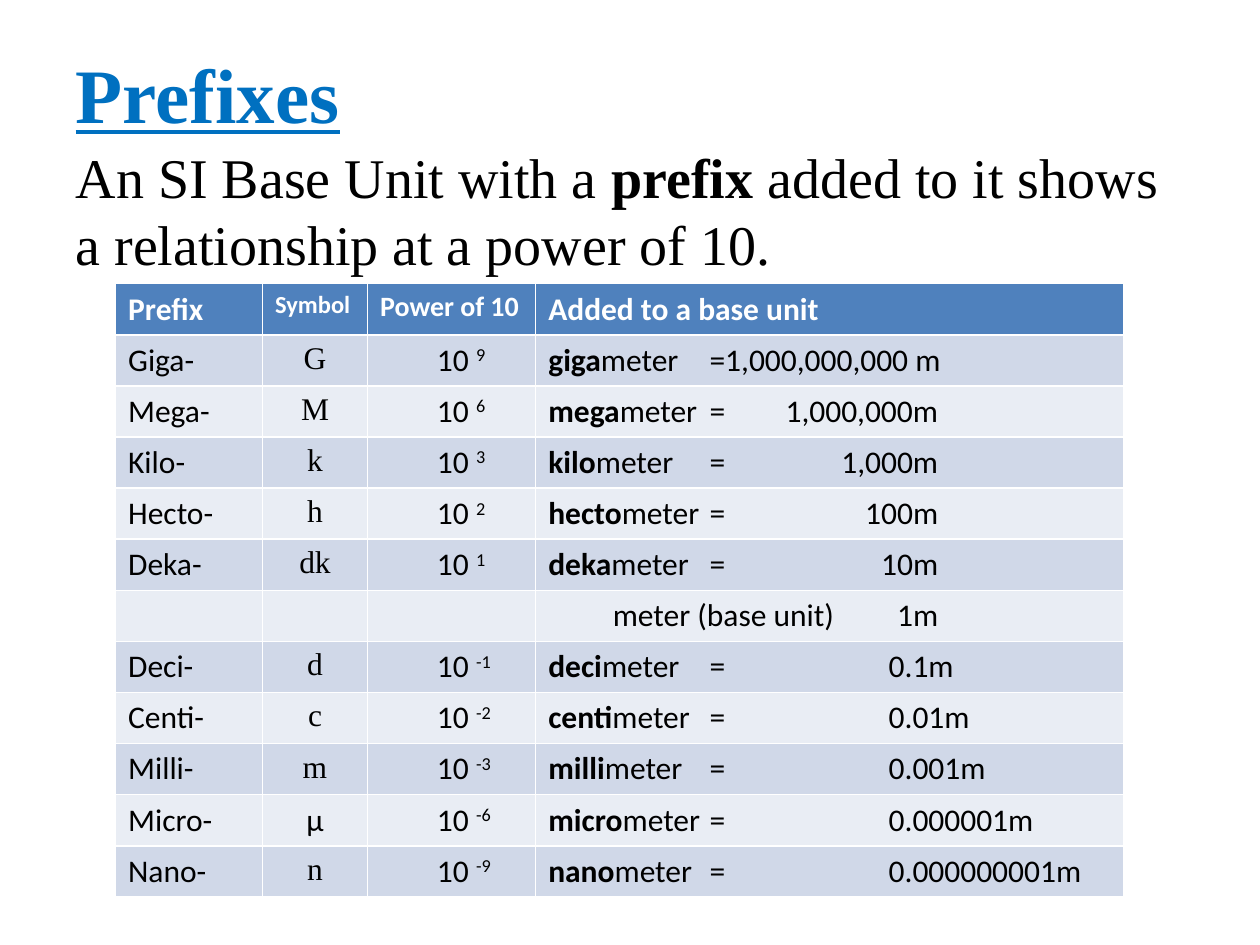
from lxml.etree import SubElement
from pptx import Presentation
from pptx.dml.color import RGBColor
from pptx.enum.text import MSO_ANCHOR, MSO_AUTO_SIZE, PP_ALIGN
from pptx.oxml.ns import qn
from pptx.util import Cm, Pt

TITLE_BLUE = RGBColor(0x00, 0x70, 0xC0)
HEADER_BLUE = RGBColor(0x4F, 0x81, 0xBD)
BANDS = (RGBColor(0xD0, 0xD8, 0xE8), RGBColor(0xE9, 0xED, 0xF4))
BLACK = RGBColor(0, 0, 0)
WHITE = RGBColor(0xFF, 0xFF, 0xFF)
SERIF = "Times New Roman"
SANS = "Calibri"

TITLE = "Prefixes"
STATEMENT = (
    ("An SI Base Unit with a ", False),
    ("prefix", True),
    (" added to it shows a relationship at a power of 10.", False),
)
HEADERS = (("Prefix", 18), ("Symbol", 14), ("Power of 10", 16), ("Added to a base unit", 18))
PREFIXES = (
    ("Giga", "G", "9", "1,000,000,000 m"),
    ("Mega", "M", "6", "1,000,000m"),
    ("Kilo", "k", "3", "1,000m"),
    ("Hecto", "h", "2", "100m"),
    ("Deka", "dk", "1", "10m"),
    None,
    ("Deci", "d", "-1", "0.1m"),
    ("Centi", "c", "-2", "0.01m"),
    ("Milli", "m", "-3", "0.001m"),
    ("Micro", "μ", "-6", "0.000001m"),
    ("Nano", "n", "-9", "0.000000001m"),
)
BASE_UNIT = "\tmeter (base unit)\t1m"

COLUMN_WIDTHS = (2.96, 2.12, 3.39, 11.85)
ROW_HEIGHT = 1.03
POWER_MARGIN = 1.4
BASE_TAB = (1.3, "l")
EQUALS_TAB = (3.25, "l")
WHOLE_TAB = (7.86, "r")
DECIMAL_TAB = (6.86, "l")


def add_run(paragraph, text, size, font_name, color=BLACK, bold=False):
    run = paragraph.add_run()
    run.text = text
    run.font.size = Pt(size)
    run.font.name = font_name
    run.font.color.rgb = color
    run.font.bold = bold
    return run


def set_tabs(paragraph, *stops):
    tab_list = SubElement(paragraph._p.get_or_add_pPr(), qn("a:tabLst"))
    for position, alignment in stops:
        SubElement(tab_list, qn("a:tab"), pos=str(Cm(position)), algn=alignment)


def place(shape, left, top, width, height):
    shape.left, shape.top, shape.width, shape.height = map(Cm, (left, top, width, height))
    shape.text_frame.auto_size = MSO_AUTO_SIZE.NONE


def fill_prefix_row(cells, name, symbol, power, value):
    prefix, symbol_text, power_text, example = (cell.text_frame.paragraphs[0] for cell in cells)
    add_run(prefix, f"{name}-", 18, SANS)
    symbol_text.alignment = PP_ALIGN.CENTER
    add_run(symbol_text, symbol, 18, SANS if symbol == "μ" else SERIF)
    cells[2].margin_left = Cm(POWER_MARGIN)
    add_run(power_text, "10 ", 18, SANS)
    exponent = add_run(power_text, power, 18, SANS)
    exponent._r.get_or_add_rPr().set("baseline", "30000")
    set_tabs(example, EQUALS_TAB, DECIMAL_TAB if power.startswith("-") else WHOLE_TAB)
    add_run(example, name.lower(), 18, SANS, bold=True)
    add_run(example, f"meter\t=\t{value}", 18, SANS)


def add_prefix_table(slide):
    row_count = len(PREFIXES) + 1
    table = slide.shapes.add_table(
        row_count, len(HEADERS), Cm(2.33), Cm(5.72),
        Cm(sum(COLUMN_WIDTHS)), Cm(ROW_HEIGHT * row_count),
    ).table
    for column, width in zip(table.columns, COLUMN_WIDTHS):
        column.width = Cm(width)
    for index, row in enumerate(table.rows):
        row.height = Cm(ROW_HEIGHT)
        for cell in row.cells:
            cell.fill.solid()
            cell.fill.fore_color.rgb = BANDS[(index - 1) % 2] if index else HEADER_BLUE
    for column, (header, size) in enumerate(HEADERS):
        paragraph = table.cell(0, column).text_frame.paragraphs[0]
        add_run(paragraph, header, size, SANS, WHITE, True)
    for index, entry in enumerate(PREFIXES, 1):
        cells = [table.cell(index, column) for column in range(len(HEADERS))]
        if entry:
            fill_prefix_row(cells, *entry)
        else:
            paragraph = cells[-1].text_frame.paragraphs[0]
            set_tabs(paragraph, BASE_TAB, WHOLE_TAB)
            add_run(paragraph, BASE_UNIT, 18, SANS)
            for cell in cells[:-1]:
                cell.text_frame.paragraphs[0].font.size = Pt(18)


def main():
    presentation = Presentation()
    presentation.slide_width, presentation.slide_height = Cm(25.4), Cm(19.05)
    slide = presentation.slides.add_slide(presentation.slide_layouts[1])

    title = slide.shapes.title
    place(title, 1.27, 0.76, 22.86, 2.21)
    title.text_frame.vertical_anchor = MSO_ANCHOR.MIDDLE
    paragraph = title.text_frame.paragraphs[0]
    paragraph.alignment = PP_ALIGN.LEFT
    add_run(paragraph, TITLE, 44, SERIF, TITLE_BLUE, True).font.underline = True

    body = slide.placeholders[1]
    place(body, 1.27, 2.74, 22.86, 2.74)
    paragraph = body.text_frame.paragraphs[0]
    paragraph.space_before = Pt(0)
    properties = paragraph._p.get_or_add_pPr()
    properties.set("marL", "0")
    properties.set("indent", "0")
    SubElement(properties, qn("a:buNone"))
    for text, bold in STATEMENT:
        add_run(paragraph, text, 32, SERIF, bold=bold)

    add_prefix_table(slide)
    presentation.save("out.pptx")


if __name__ == "__main__":
    main()
